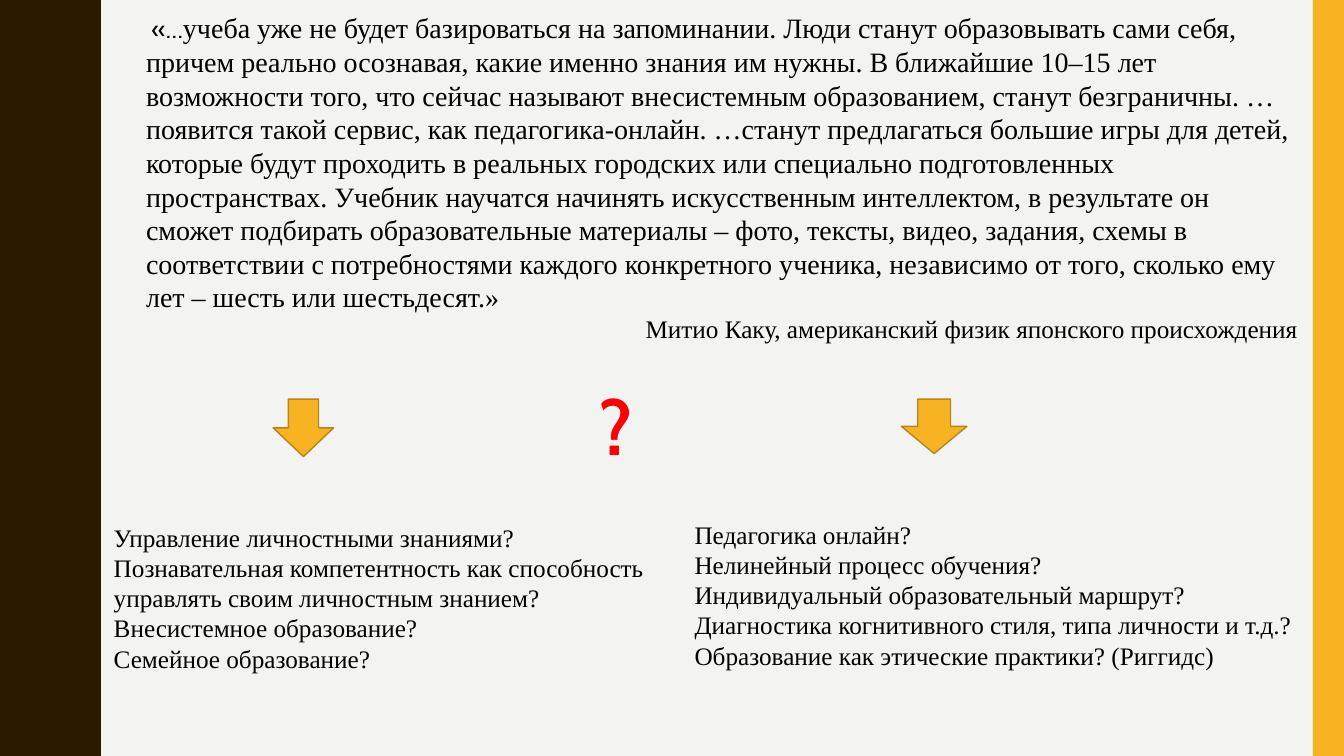
from dataclasses import dataclass

from pptx import Presentation
from pptx.dml.color import RGBColor
from pptx.enum.shapes import MSO_SHAPE as SHAPE
from pptx.enum.text import PP_ALIGN as ALIGN
from pptx.util import Inches, Pt

BACKGROUND = RGBColor(0xF3, 0xF3, 0xF2)
BROWN = RGBColor(0x2A, 0x1A, 0x00)
YELLOW = RGBColor(0xF8, 0xB3, 0x23)
OCHRE = RGBColor(0xB7, 0x84, 0x1A)
BLACK = RGBColor(0, 0, 0)
RED = RGBColor(0xFF, 0, 0)
SERIF, SANS = "Times New Roman", "Cabin"

WIDTH, HEIGHT = 13.33, 7.5
HALF_WAVE = [(0.78, 0), (0.78, 0.07), (0.79, 0.14), (0.8, 0.2), (0.81, 0.25),
             (0.83, 0.29), (0.85, 0.33), (0.87, 0.38), (0.89, 0.42), (0.91, 0.46),
             (0.93, 0.5), (0.95, 0.55), (0.96, 0.61), (0.97, 0.68), (0.97, 0.75)]
PERIOD = 1.5


@dataclass
class Run:
    text: str
    size: float = 18
    name: str = SERIF
    color: RGBColor = BLACK
    bold: bool = False


@dataclass
class Para:
    runs: list[Run]
    align: ALIGN = ALIGN.LEFT


@dataclass
class TextBox:
    left: float
    top: float
    width: float
    height: float
    paras: list[Para]


@dataclass
class Block:
    shape: SHAPE
    left: float
    top: float
    width: float
    height: float
    line: RGBColor | None = None


def lines(*texts: str) -> list[Para]:
    return [Para([Run(text)]) for text in texts]


QUOTE = (
    "учеба уже не будет базироваться на запоминании. Люди станут образовывать сами себя, "
    "причем реально осознавая, какие именно знания им нужны. В ближайшие 10–15 лет "
    "возможности того, что сейчас называют внесистемным образованием, станут безграничны. … "
    "появится такой сервис, как педагогика-онлайн. …станут предлагаться большие игры для детей, "
    "которые будут проходить в реальных городских или специально подготовленных "
    "пространствах. Учебник научатся начинять искусственным интеллектом, в результате он "
    "сможет подбирать образовательные материалы – фото, тексты, видео, задания, схемы в "
    "соответствии с потребностями каждого конкретного ученика, независимо от того, сколько ему "
    "лет – шесть или шестьдесят.»"
)

BLOCKS = [
    Block(SHAPE.RECTANGLE, 13.02, 0, 0.31, HEIGHT),
    Block(SHAPE.DOWN_ARROW, 2.71, 3.96, 0.6, 0.57, OCHRE),
    Block(SHAPE.DOWN_ARROW, 8.94, 3.96, 0.65, 0.54, OCHRE),
]

TEXT_BOXES = [
    TextBox(1.35, 0.06, 11.62, 3.74, [
        Para([Run(" «…", name=SANS), Run(QUOTE, size=20)]),
        Para([Run("Митио Каку, американский физик японского происхождения")], ALIGN.RIGHT),
    ]),
    TextBox(1.03, 5.13, 5.64, 1.62, lines(
        "Управление личностными знаниями?",
        "Познавательная компетентность как способность управлять своим личностным знанием?",
        "Внесистемное образование?",
        "Семейное образование?",
    )),
    TextBox(6.79, 5.1, 6.18, 1.62, lines(
        "Педагогика онлайн?",
        "Нелинейный процесс обучения?",
        "Индивидуальный образовательный маршрут?",
        "Диагностика когнитивного стиля, типа личности и т.д.?",
        "Образование как этические практики? (Риггидс)",
    )),
    TextBox(5.85, 3.72, 0.55, 1.01, [Para([Run("?", 54, SANS, RED, True)])]),
]


def paint(shape, fill: RGBColor, line: RGBColor | None = None) -> None:
    shape.shadow.inherit = False
    shape.fill.solid()
    shape.fill.fore_color.rgb = fill
    if line is None:
        shape.line.fill.background()
    else:
        shape.line.color.rgb = line
        shape.line.width = Pt(1)


def add_wavy_edge(s) -> None:
    """Draw the left band, whose right side repeats a half wave and its mirror."""
    wave = HALF_WAVE + [(x, PERIOD - y) for x, y in HALF_WAVE[-2::-1]]
    edge = [(x, y + i * PERIOD) for i in range(round(HEIGHT / PERIOD)) for x, y in wave]
    builder = s.shapes.build_freeform(0, 0, scale=Inches(1))
    builder.add_line_segments(edge + [(0, HEIGHT)], close=True)
    paint(builder.convert_to_shape(), BROWN)


def add_block(s, block: Block) -> None:
    box = map(Inches, (block.left, block.top, block.width, block.height))
    paint(s.shapes.add_shape(block.shape, *box), YELLOW, block.line)


def add_text(s, item: TextBox) -> None:
    box = map(Inches, (item.left, item.top, item.width, item.height))
    tf = s.shapes.add_textbox(*box).text_frame
    tf.word_wrap = True
    for i, para in enumerate(item.paras):
        p = tf.add_paragraph() if i else tf.paragraphs[0]
        p.alignment = para.align
        for run in para.runs:
            r = p.add_run()
            r.text = run.text
            r.font.color.rgb = run.color
            font = {"size": Pt(run.size), "name": run.name, "bold": run.bold}
            for key, value in font.items():
                setattr(r.font, key, value)


def main() -> None:
    prs = Presentation()
    prs.slide_width, prs.slide_height = Inches(WIDTH), Inches(HEIGHT)
    s = prs.slides.add_slide(prs.slide_layouts[6])
    s.background.fill.solid()
    s.background.fill.fore_color.rgb = BACKGROUND
    add_wavy_edge(s)
    for block in BLOCKS:
        add_block(s, block)
    for item in TEXT_BOXES:
        add_text(s, item)
    prs.save("out.pptx")


if __name__ == "__main__":
    main()
